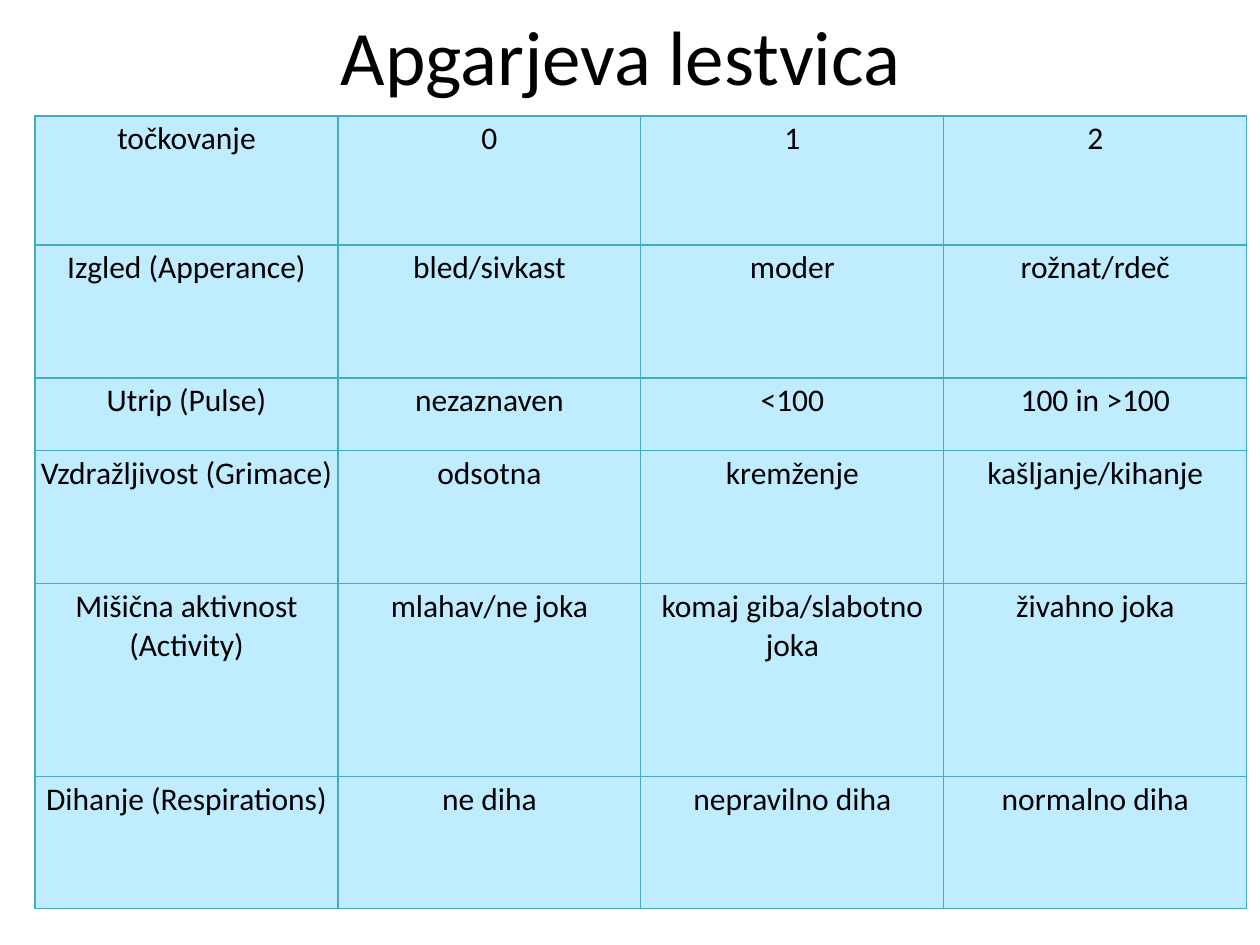
import pptx
import pptx.dml.color
import pptx.enum.text
import pptx.oxml
import pptx.oxml.ns
import pptx.util

EMU_PER_PX = 914400 // 126

ROW_HEIGHTS = [129, 133, 73, 133, 193, 132]
COLUMN_WIDTH = 303
APGAR_SCORES = [
    ["točkovanje", "0", "1", "2"],
    ["Izgled (Apperance)", "bled/sivkast", "moder", "rožnat/rdeč"],
    ["Utrip (Pulse)", "nezaznaven", "<100", "100 in >100"],
    ["Vzdražljivost (Grimace)", "odsotna", "kremženje", "kašljanje/kihanje"],
    ["Mišična aktivnost (Activity)", "mlahav/ne joka", "komaj giba/slabotno joka", "živahno joka"],
    ["Dihanje (Respirations)", "ne diha", "nepravilno diha", "normalno diha"],
]


def px(length):
    return pptx.util.Emu(length * EMU_PER_PX)


def color(value):
    return pptx.dml.color.RGBColor.from_string(value)


class SlideBuilder:
    font_name = "Calibri"
    text_color = "000000"
    cell_fill = "BFECFF"
    border_color = "46AAC5"
    border_width = pptx.util.Pt(0.75)
    cell_margin = 4

    def __init__(self, slide):
        self.slide = slide

    def set_text(self, text_frame, text, size):
        paragraph = text_frame.paragraphs[0]
        paragraph.text = text
        paragraph.alignment = pptx.enum.text.PP_ALIGN.CENTER
        paragraph.font.name = self.font_name
        paragraph.font.size = pptx.util.Pt(size)
        paragraph.font.color.rgb = color(self.text_color)

    def title(self, text, left, top, width, height):
        shape = self.slide.shapes.add_textbox(px(left), px(top), px(width), px(height))
        shape.text_frame.word_wrap = True
        shape.text_frame.vertical_anchor = pptx.enum.text.MSO_ANCHOR.MIDDLE
        self.set_text(shape.text_frame, text, 44)

    def borders(self, cell):
        properties = cell._tc.get_or_add_tcPr()
        for index, side in enumerate(("lnL", "lnR", "lnT", "lnB")):
            line = pptx.oxml.parse_xml(
                f'<a:{side} {pptx.oxml.ns.nsdecls("a")} w="{self.border_width}">'
                f'<a:solidFill><a:srgbClr val="{self.border_color}"/></a:solidFill></a:{side}>'
            )
            properties.insert(index, line)

    def table(self, rows, left, top, column_width, row_heights):
        column_count = len(rows[0])
        table = self.slide.shapes.add_table(
            len(rows), column_count, px(left), px(top),
            px(column_width * column_count), px(sum(row_heights)),
        ).table
        table.first_row = False
        table.horz_banding = False
        for column in table.columns:
            column.width = px(column_width)
        for row, height, texts in zip(table.rows, row_heights, rows):
            row.height = px(height)
            for cell, text in zip(row.cells, texts):
                cell.margin_left = cell.margin_right = px(self.cell_margin)
                cell.margin_top = cell.margin_bottom = px(self.cell_margin)
                cell.fill.solid()
                cell.fill.fore_color.rgb = color(self.cell_fill)
                self.borders(cell)
                self.set_text(cell.text_frame, text, 18)


def main():
    presentation = pptx.Presentation()
    presentation.slide_width = px(1260)
    presentation.slide_height = px(945)
    slide = presentation.slides.add_slide(presentation.slide_layouts[6])
    builder = SlideBuilder(slide)
    builder.title("Apgarjeva lestvica", 54, -24, 1134, 158)
    builder.table(APGAR_SCORES, 35, 116, COLUMN_WIDTH, ROW_HEIGHTS)
    presentation.save("out.pptx")


if __name__ == "__main__":
    main()
